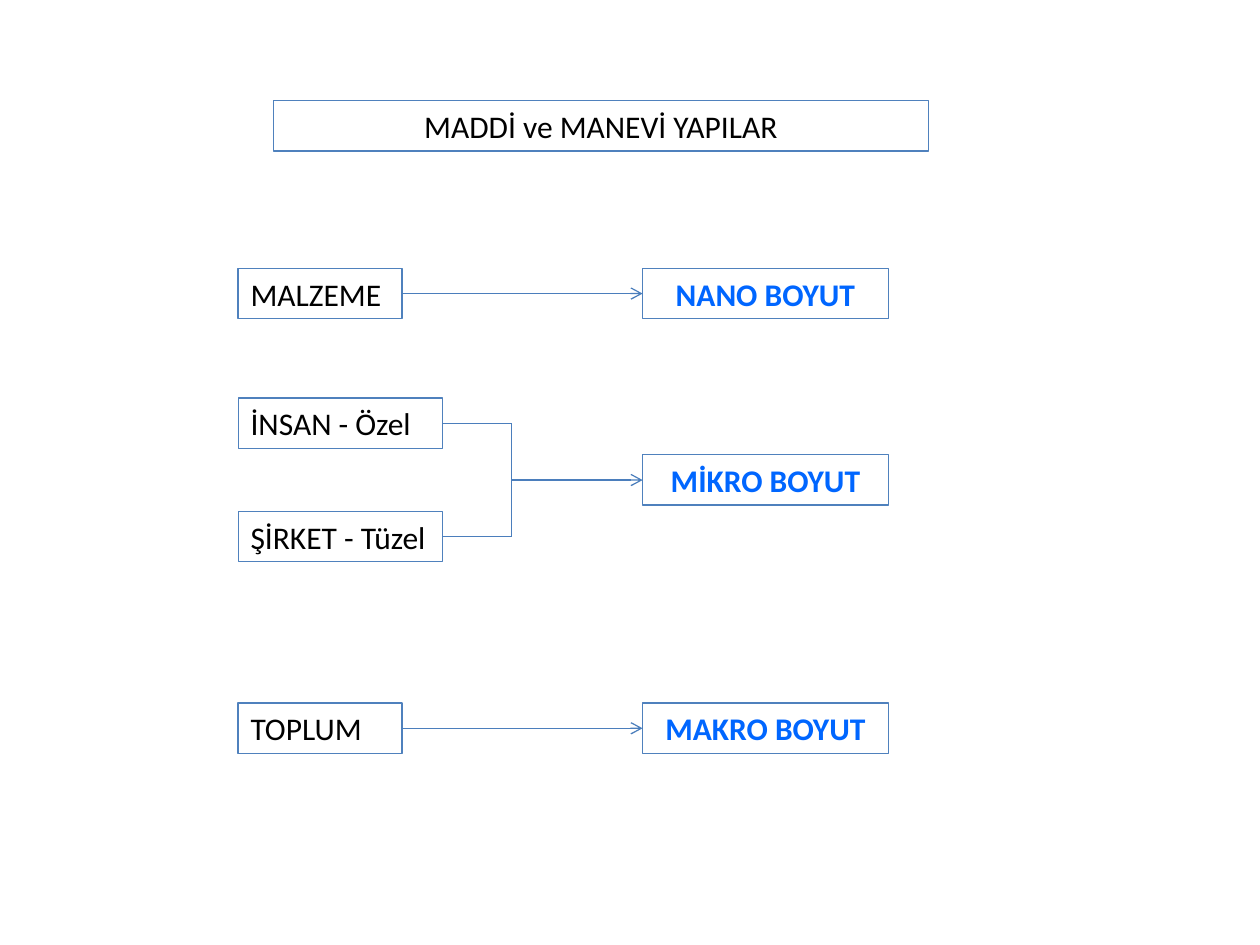
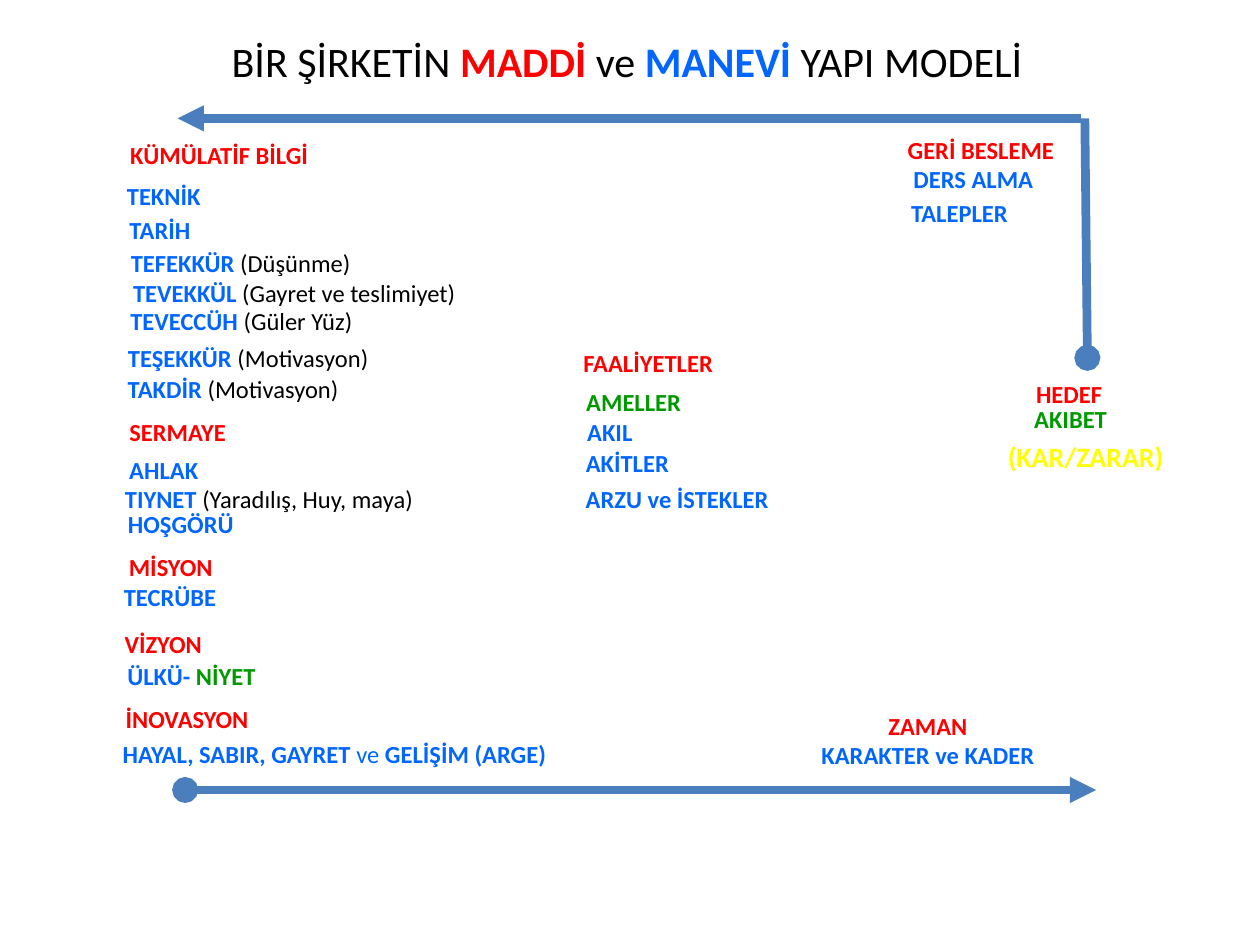
from lxml.etree import SubElement
from pptx import Presentation
from pptx.dml.color import RGBColor
from pptx.enum.shapes import MSO_CONNECTOR, MSO_SHAPE
from pptx.enum.text import MSO_ANCHOR, PP_ALIGN
from pptx.oxml.ns import qn
from pptx.util import Inches, Pt

COLORS = {"black": "000000", "red": "FF0000", "blue": "0066FF", "green": "009900",
          "yellow": "FFFF00", "outline": "4F81BD", "arrow": "4B7EBC"}
FONT = "Calibri"
TOP, LEFT, BOTTOM, RIGHT = range(4)
BOX_HEIGHT = 0.4
LABEL_HEIGHT = 0.34


def color(name):
    return RGBColor.from_string(COLORS[name])


def write(shape, *paragraphs, size=14, align=PP_ALIGN.CENTER):
    """Fill a shape; each paragraph is a list of (text, colour, bold) runs."""
    frame = shape.text_frame
    frame.word_wrap = True
    frame.vertical_anchor = MSO_ANCHOR.TOP
    for index, runs in enumerate(paragraphs):
        paragraph = frame.add_paragraph() if index else frame.paragraphs[0]
        paragraph.alignment = align
        for text, color_name, bold in runs:
            run = paragraph.add_run()
            run.text = text
            run.font.name = FONT
            run.font.size = Pt(size)
            run.font.bold = bold
            run.font.color.rgb = color(color_name)


def add_text(slide, left, top, width, height, *paragraphs, **formatting):
    shape = slide.shapes.add_textbox(*map(Inches, (left, top, width, height)))
    write(shape, *paragraphs, **formatting)


def add_box(slide, left, top, width, text, color_name="black", bold=False,
            align=PP_ALIGN.CENTER):
    box = slide.shapes.add_shape(
        MSO_SHAPE.RECTANGLE, *map(Inches, (left, top, width, BOX_HEIGHT)))
    box.shadow.inherit = False
    box.fill.background()
    box.line.color.rgb = color("outline")
    box.line.width = Pt(0.75)
    write(box, [(text, color_name, bold)], size=18, align=align)
    return box


def add_line(slide, start, end, width=0.75, head=None, tail=None,
             begin_box=None, end_box=None):
    """Draw a line, joined to a box's right side or to a box's left side if given."""
    line = slide.shapes.add_connector(
        MSO_CONNECTOR.STRAIGHT, *map(Inches, (*start, *end)))
    line.line.color.rgb = color("arrow")
    line.line.width = Pt(width)
    outline = line.line._get_or_add_ln()
    for tag, kind in (("a:headEnd", head), ("a:tailEnd", tail)):
        if kind:
            SubElement(outline, qn(tag), type=kind)
    SubElement(line._element.spPr, qn("a:effectLst"))
    if begin_box is not None:
        line.begin_connect(begin_box, RIGHT)
    if end_box is not None:
        line.end_connect(end_box, LEFT)


def add_scale_row(slide, left, top, sources, source_width, size_name):
    """Link one source box, or a bracketed pair of them, to its size box."""
    pitch, size_left, bracket = 0.9, left + 3.21, left + 2.17
    size_top = top + pitch * (len(sources) - 1) / 2
    middle = size_top + BOX_HEIGHT / 2
    size_box = add_box(slide, size_left, size_top, 1.95, size_name, "blue", True)
    boxes = [add_box(slide, left, top + index * pitch, source_width, text,
                     align=PP_ALIGN.LEFT) for index, text in enumerate(sources)]
    if len(boxes) == 1:
        add_line(slide, (left + source_width, middle), (size_left, middle),
                 tail="arrow", begin_box=boxes[0], end_box=size_box)
        return
    centers = [top + index * pitch + BOX_HEIGHT / 2 for index in range(len(boxes))]
    for box, center in zip(boxes, centers):
        add_line(slide, (left + source_width, center), (bracket, center), begin_box=box)
    add_line(slide, (bracket, centers[-1]), (bracket, centers[0]))
    add_line(slide, (bracket, middle), (size_left, middle), tail="arrow",
             end_box=size_box)


def add_labels(slide, left, top, labels):
    """Place labels given as (x offset, y offset, width, text, colour, note)."""
    for x, y, width, text, color_name, *note in labels:
        runs = [(text, color_name, True)] + [(words, "black", False) for words in note]
        add_text(slide, left + x, top + y, width, LABEL_HEIGHT, runs)


def add_knowledge(slide, left, top):
    add_labels(slide, left, top, [
        (0.17, 0, 2.34, "KÜMÜLATİF BİLGİ", "red"),
        (0.01, 0.33, 1.78, "TEKNİK", "blue"),
        (-0.03, 0.6, 1.8, "TARİH", "blue"),
        (0.35, 0.86, 2.32, "TEFEKKÜR", "blue", " (Düşünme)"),
        (0.5, 1.1, 2.87, "TEVEKKÜL", "blue", " (Gayret ve teslimiyet)"),
        (0.32, 1.32, 2.39, "TEVECCÜH", "blue", " (Güler Yüz)"),
        (0.39, 1.61, 2.36, "TEŞEKKÜR ", "blue", "(Motivasyon)"),
        (0.28, 1.86, 2.34, "TAKDİR ", "blue", "(Motivasyon)"),
        (0.24, 2.2, 1.54, "SERMAYE", "red"),
        (0.13, 2.5, 1.54, "AHLAK", "blue"),
        (0.12, 2.73, 3.23, "TIYNET ", "blue", "(Yaradılış, Huy, maya)"),
        (0.13, 2.93, 1.81, "HOŞGÖRÜ", "blue"),
        (0.01, 3.27, 1.89, "MİSYON", "red"),
        (0.05, 3.51, 1.8, "TECRÜBE", "blue"),
        (0.1, 3.88, 1.59, "VİZYON", "red"),
        (0.22, 4.48, 1.73, "İNOVASYON", "red"),
    ])
    add_text(slide, left + 0.19, top + 4.14, 1.86, LABEL_HEIGHT,
             [("ÜLKÜ- ", "blue", True), ("NİYET", "green", True)])
    add_text(slide, left + 0.22, top + 4.76, 4.07, LABEL_HEIGHT,
             [("HAYAL, SABIR, GAYRET ", "blue", True), ("ve ", "blue", False),
              ("GELİŞİM (ARGE)", "blue", True)])


def add_activities(slide, left, top):
    add_labels(slide, left, top, [
        (0, 0, 2.17, "FAALİYETLER", "red"),
        (0, 0.31, 1.94, "AMELLER", "green"),
        (0.09, 0.55, 1.38, "AKIL", "blue"),
        (0.12, 0.8, 1.6, "AKİTLER", "blue"),
        (0.34, 1.08, 1.95, "ARZU ve İSTEKLER", "blue"),
    ])


def add_feedback(slide, left, top):
    add_labels(slide, left, top, [
        (0.06, 0, 1.81, "GERİ BESLEME", "red"),
        (0.02, 0.23, 1.77, "DERS ALMA", "blue"),
        (0, 0.5, 1.59, "TALEPLER", "blue"),
    ])


def add_target(slide, left, top):
    add_labels(slide, left, top, [(0, 0, 1.89, "HEDEF", "red")])
    add_text(slide, left + 0.57, top + 0.2, 1.18, LABEL_HEIGHT,
             [("AKIBET", "green", True)], align=PP_ALIGN.LEFT)
    add_text(slide, left + 0.36, top + 0.48, 1.6, 0.37,
             [("(KAR/ZARAR)", "yellow", True)], size=16, align=PP_ALIGN.LEFT)


def add_cycle_arrows(slide, left, top):
    add_line(slide, (left, top), (left + 7.17, top), width=5, head="triangle")
    add_line(slide, (left + 7.2, top), (left + 7.22, top + 1.9), width=5, tail="oval")
    add_line(slide, (left + 0.06, top + 5.33), (left + 7.29, top + 5.33), width=5,
             head="oval", tail="triangle")


def build_scales(slide):
    add_box(slide, 2.17, 0.8, 5.2, "MADDİ ve MANEVİ YAPILAR")
    for top, sources, width, size_name in (
            (2.13, ["MALZEME"], 1.3, "NANO BOYUT"),
            (3.16, ["İNSAN - Özel", "ŞİRKET - Tüzel"], 1.62, "MİKRO BOYUT"),
            (5.58, ["TOPLUM"], 1.3, "MAKRO BOYUT")):
        add_scale_row(slide, 1.89, top, sources, width, size_name)


def build_company_model(slide):
    add_text(slide, 1.74, 0.23, 6.58, 0.5,
             [("BİR ŞİRKETİN ", "black", False), ("MADDİ ", "red", True),
              ("ve ", "black", False), ("MANEVİ", "blue", True),
              (" YAPI MODELİ", "black", False)], size=24, align=PP_ALIGN.LEFT)
    add_cycle_arrows(slide, 1.41, 0.94)
    add_knowledge(slide, 0.4, 1.06)
    add_activities(slide, 4.06, 2.71)
    add_feedback(slide, 6.82, 1.02)
    add_target(slide, 7.54, 2.96)
    add_text(slide, 6.1, 5.59, 2.53, 0.57, [("ZAMAN", "red", True)],
             [("KARAKTER ve KADER", "blue", True)])


def main():
    presentation = Presentation()
    presentation.slide_width = Inches(10)
    presentation.slide_height = Inches(7.5)
    for build in (build_scales, build_company_model):
        build(presentation.slides.add_slide(presentation.slide_layouts[6]))
    presentation.save("out.pptx")


if __name__ == "__main__":
    main()
